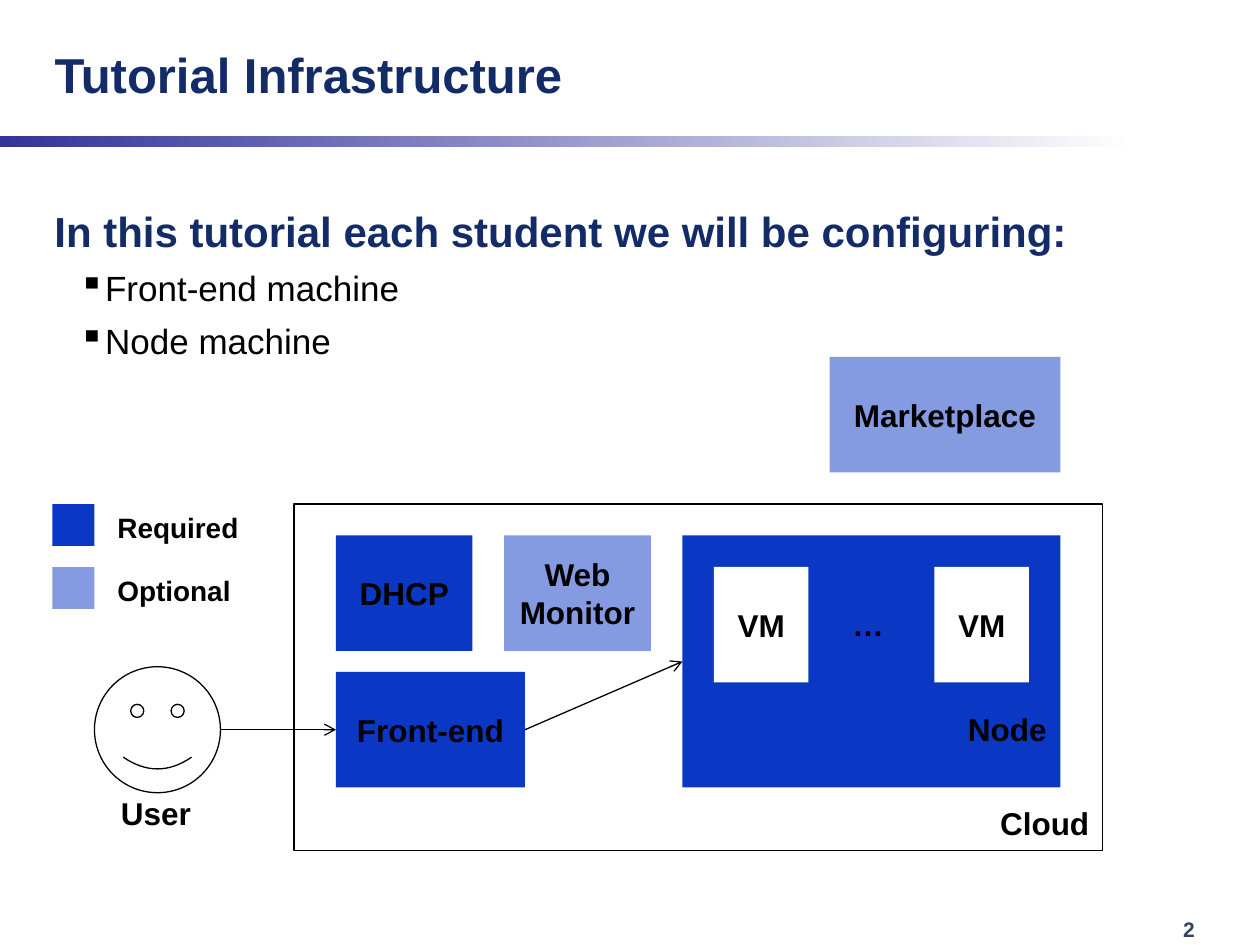
from typing import NamedTuple, Optional

from lxml.etree import SubElement
from pptx import Presentation
from pptx.dml.color import RGBColor
from pptx.enum.shapes import MSO_CONNECTOR as Connector, MSO_SHAPE as Shape
from pptx.enum.text import MSO_ANCHOR as Anchor, MSO_AUTO_SIZE as AutoSize, PP_ALIGN as Align
from pptx.oxml.ns import qn
from pptx.util import Pt

COLORS = {
    "navy": "132B66",
    "blue": "0A37C4",
    "black": "000000",
    "white": "FFFFFF",
    "indigo": "333399",
    "slate": "32425D",
}
FONT = "Arial"
BOX_HEIGHT = 66
SWATCH = 24


class Box(NamedTuple):
    left: float
    top: float
    width: float
    height: float = BOX_HEIGHT
    lines: tuple = ()
    fill: Optional[str] = "blue"
    optional: bool = False
    outlined: bool = False
    kind: Shape = Shape.RECTANGLE


class Label(NamedTuple):
    text: str
    left: float
    top: float
    width: float
    height: float = 29
    size: float = 18
    color: str = "black"
    align: Align = Align.LEFT


class Line(NamedTuple):
    text: str
    size: float
    color: str
    bold: bool
    space_before: float = 0
    bulleted: bool = False


CLOUD = Box(168, 288, 462, 198, fill=None, outlined=True)
FRONT_END = Box(192, 384, 108, lines=("Front-end",))
NODE = Box(390, 306, 216, 144)
USER = Box(54, 381, 72, 72, fill=None, outlined=True, kind=Shape.SMILEY_FACE)
SERVICES = (
    Box(192, 306, 78, lines=("DHCP",)),
    Box(474, 204, 132, lines=("Marketplace",), optional=True),
    Box(288, 306, 84, lines=("Web", "Monitor"), optional=True),
)
MACHINES = tuple(Box(left, 324, 54, lines=("VM",), fill="white") for left in (408, 534))
LABELS = (
    Label("Node", 546, 402, 60),
    Label("…", 480, 342, 32.4),
    Label("Cloud", 564, 456, 66, align=Align.CENTER),
    Label("User", 62, 450, 54.7),
    Label("2", 669, 520, 46, 21.6, 12, "slate"),
)
LEGEND = (("Required", False), ("Optional", True))
BODY = (
    Line("In this tutorial each student we will be configuring:", 24, "navy", True),
    Line("Front-end machine", 20, "black", False, 6, True),
    Line("Node machine", 20, "black", False, 6, True),
)


def rgb(name: str) -> RGBColor:
    return RGBColor.from_string(COLORS[name])


def add_run(paragraph, text: str, size: float, color: str, bold: bool = True) -> None:
    run = paragraph.add_run()
    run.text = text
    run.font.name = FONT
    run.font.size = Pt(size)
    run.font.bold = bold
    run.font.color.rgb = rgb(color)


def add_box(slide, box: Box):
    shape = slide.shapes.add_shape(
        box.kind, Pt(box.left), Pt(box.top), Pt(box.width), Pt(box.height))
    shape.shadow.inherit = False
    if box.fill:
        shape.fill.solid()
        shape.fill.fore_color.rgb = rgb(box.fill)
    else:
        shape.fill.background()
    if box.optional:
        color = shape._element.spPr.find(f"{qn('a:solidFill')}/{qn('a:srgbClr')}")
        SubElement(color, qn("a:alpha"), val="50000")
    if box.outlined:
        shape.line.color.rgb = rgb("black")
        shape.line.width = Pt(0.75)
    else:
        shape.line.fill.background()
    frame = shape.text_frame
    frame.word_wrap = False
    frame.vertical_anchor = Anchor.MIDDLE
    for index, text in enumerate(box.lines):
        paragraph = frame.add_paragraph() if index else frame.paragraphs[0]
        paragraph.alignment = Align.CENTER
        add_run(paragraph, text, 18, "black")
    return shape


def add_label(slide, label: Label) -> None:
    text_box = slide.shapes.add_textbox(
        Pt(label.left), Pt(label.top), Pt(label.width), Pt(label.height))
    text_box.text_frame.word_wrap = False
    paragraph = text_box.text_frame.paragraphs[0]
    paragraph.alignment = label.align
    add_run(paragraph, label.text, label.size, label.color)


def add_arrow(slide, begin: tuple, end: tuple):
    connector = slide.shapes.add_connector(Connector.STRAIGHT, *map(Pt, begin + end))
    connector.line.color.rgb = rgb("black")
    connector.line.width = Pt(0.75)
    properties = connector._element.spPr
    SubElement(properties.find(qn("a:ln")), qn("a:tailEnd"), type="arrow")
    SubElement(properties, qn("a:effectLst"))
    return connector


def left_middle(box: Box) -> tuple:
    return box.left, box.top + box.height / 2


def right_middle(box: Box) -> tuple:
    return box.left + box.width, box.top + box.height / 2


def add_header(slide) -> None:
    """Draw the fading bar and fill the title placeholder."""
    bar = add_box(slide, Box(0, 78, 720, 6))
    bar.fill.gradient()
    bar.fill.gradient_angle = 0
    for stop, position, color in zip(bar.fill.gradient_stops, (0, 0.9), ("indigo", "white")):
        stop.position = position
        stop.color.rgb = rgb(color)

    title = slide.shapes.title
    title.left, title.top, title.width, title.height = map(Pt, (24, 6, 510, 72))
    title.text_frame.auto_size = AutoSize.NONE
    title.text_frame.vertical_anchor = Anchor.MIDDLE
    paragraph = title.text_frame.paragraphs[0]
    paragraph.alignment = Align.LEFT
    add_run(paragraph, "Tutorial Infrastructure", 28, "navy")


def add_body(slide) -> None:
    frame = slide.shapes.add_textbox(Pt(24), Pt(114), Pt(672), Pt(102)).text_frame
    frame.word_wrap = True
    for index, line in enumerate(BODY):
        paragraph = frame.add_paragraph() if index else frame.paragraphs[0]
        if line.bulleted:
            paragraph.level = 1
            properties = paragraph._p.get_or_add_pPr()
            properties.set("marL", str(Pt(28)))
            properties.set("indent", str(Pt(-14)))
            SubElement(properties, qn("a:buChar"), char="▪")
        paragraph.space_before = Pt(line.space_before)
        add_run(paragraph, line.text, line.size, line.color, line.bold)


def add_legend(slide) -> None:
    for index, (text, optional) in enumerate(LEGEND):
        top = CLOUD.top + 36 * index
        add_box(slide, Box(30, top, SWATCH, SWATCH, optional=optional))
        add_label(slide, Label(text, 60, top, 84, 26.6, 16))


def main() -> None:
    presentation = Presentation()
    presentation.slide_width, presentation.slide_height = Pt(720), Pt(540)
    slide = presentation.slides.add_slide(presentation.slide_layouts[5])
    add_header(slide)
    add_body(slide)
    front_end, node = add_box(slide, FRONT_END), add_box(slide, NODE)
    for box in (*MACHINES, CLOUD, *SERVICES, USER):
        add_box(slide, box)
    request = add_arrow(slide, right_middle(USER), left_middle(FRONT_END))
    request.end_connect(front_end, 1)
    deployment = add_arrow(slide, right_middle(FRONT_END), left_middle(NODE))
    deployment.begin_connect(front_end, 3)
    deployment.end_connect(node, 1)
    for label in LABELS:
        add_label(slide, label)
    add_legend(slide)
    presentation.save("out.pptx")


if __name__ == "__main__":
    main()
